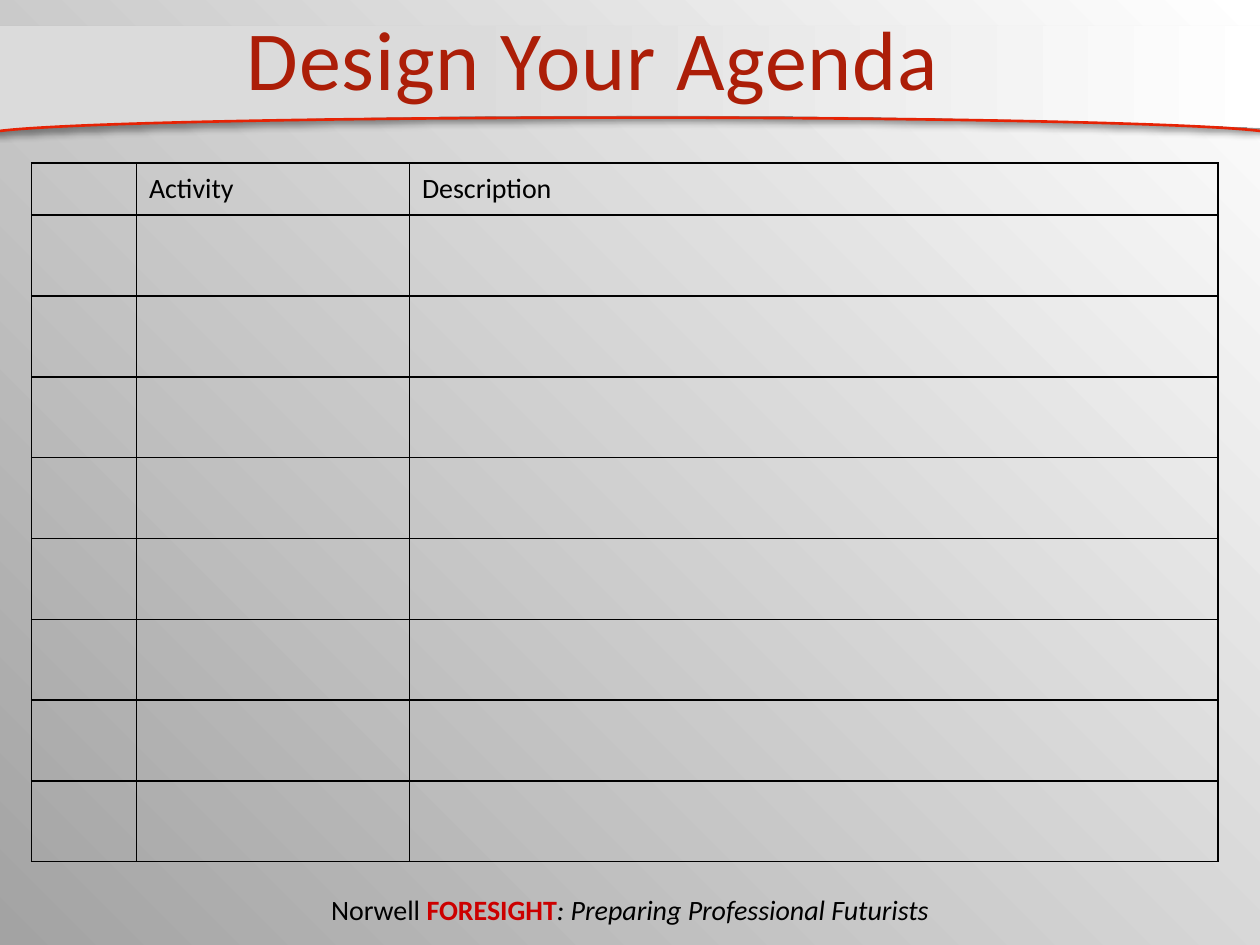
from dataclasses import dataclass

from pptx import Presentation
from pptx import util as u
from pptx.dml.color import RGBColor
from pptx.enum import shapes, text
from pptx.oxml import parse_xml
from pptx.oxml.ns import nsdecls


@dataclass(frozen=True)
class Theme:
    font: str = "Calibri"
    ink: str = "000000"
    title: str = "AC1E08"
    accent: str = "CC0000"
    arc: str = "E62305"
    backdrop: tuple = ((0, "FFFFFF"), (1, "A3A3A3"))
    band: tuple = ((0.36, "DBDBDB"), (1, "FFFFFF"))
    title_size: int = 48
    body_size: int = 16


def bezier(p0, p1, p2, p3, steps=30):
    """Points along a cubic curve, without its start."""
    for i in range(1, steps + 1):
        t = i / steps
        s = 1 - t
        yield tuple(s**3 * a + 3 * s * s * t * b + 3 * s * t * t * c + t**3 * d
                    for a, b, c, d in zip(p0, p1, p2, p3))


class AgendaSlide:
    """Places elements on a grid of 120 columns by 90 rows."""
    COLS, ROWS = 120, 90

    def __init__(self, prs, theme):
        self.theme = theme
        self.slide = prs.slides.add_slide(prs.slide_layouts[6])
        self.col = prs.slide_width / self.COLS
        self.row = prs.slide_height / self.ROWS

    def box(self, x, y, w, h):
        return (round(x * self.col), round(y * self.row),
                round(w * self.col), round(h * self.row))

    def gradient(self, fill, stops, angle):
        fill.gradient()
        fill.gradient_angle = angle
        for stop, (position, color) in zip(fill.gradient_stops, stops):
            stop.position = position
            stop.color.rgb = RGBColor.from_string(color)

    def backdrop(self):
        self.gradient(self.slide.background.fill, self.theme.backdrop, 225)

    def band(self, points):
        points = [self.box(x, y, 0, 0)[:2] for x, y in points]
        builder = self.slide.shapes.build_freeform(*points[0])
        builder.add_line_segments(points[1:])
        band = builder.convert_to_shape()
        self.gradient(band.fill, self.theme.band, 0)
        band.line.fill.background()
        band._element.spPr.append(parse_xml(
            f'<a:effectLst {nsdecls("a")}><a:outerShdw blurRad="{u.Pt(4)}" '
            f'dist="{u.Pt(3)}" dir="5400000" algn="t" rotWithShape="0">'
            f'<a:srgbClr val="{self.theme.ink}"><a:alpha val="40000"/></a:srgbClr>'
            '</a:outerShdw></a:effectLst>'))

    def arc(self, x, y, w, h, start, end):
        arc = self.slide.shapes.add_shape(
            shapes.MSO_SHAPE.ARC, *self.box(x, y, w, h))
        arc.adjustments[0], arc.adjustments[1] = start, end
        arc.shadow.inherit = False
        arc.fill.background()
        arc.line.color.rgb = RGBColor.from_string(self.theme.arc)
        arc.line.width = u.Pt(1.5)

    def style(self, run, size, color, bold=False, italic=False):
        font = run.font
        font.name, font.size = self.theme.font, u.Pt(size)
        font.bold, font.italic = bold, italic
        font.color.rgb = RGBColor.from_string(color)

    def text(self, x, y, w, h, parts, size, spacing=0):
        """parts: (wording, color, bold, italic) for each run."""
        frame = self.slide.shapes.add_textbox(*self.box(x, y, w, h)).text_frame
        frame.word_wrap = True
        frame.auto_size = text.MSO_AUTO_SIZE.SHAPE_TO_FIT_TEXT
        frame.vertical_anchor = text.MSO_ANCHOR.MIDDLE
        line = frame.paragraphs[0]
        line.alignment = text.PP_ALIGN.CENTER
        for wording, *look in parts:
            run = line.add_run()
            run.text = wording
            self.style(run, size, *look)
            if spacing:
                run.font._element.set("spc", str(round(spacing * 100)))

    def border(self, cell):
        props = cell._tc.get_or_add_tcPr()
        for i, side in enumerate(("lnL", "lnR", "lnT", "lnB")):
            props.insert(i, parse_xml(
                f'<a:{side} {nsdecls("a")} w="{u.Pt(1)}"><a:solidFill>'
                f'<a:srgbClr val="{self.theme.ink}"/></a:solidFill></a:{side}>'))

    def table(self, x, y, widths, heights, headings):
        table = self.slide.shapes.add_table(
            len(heights), len(widths),
            *self.box(x, y, sum(widths), sum(heights))).table
        table.first_row = table.horz_banding = False
        for column, width in zip(table.columns, widths):
            column.width = round(width * self.col)
        for row, height in zip(table.rows, heights):
            row.height = round(height * self.row)
        for cell in table.iter_cells():
            cell.fill.background()
            self.border(cell)
        for cell, heading in zip(table.rows[0].cells, headings):
            line = cell.text_frame.paragraphs[0]
            line.text = heading
            line.line_spacing = 1.07
            for run in line.runs:
                self.style(run, self.theme.body_size, self.theme.ink)


def main():
    prs = Presentation()
    prs.slide_width, prs.slide_height = u.Inches(10), u.Inches(7.5)
    theme = Theme()
    agenda = AgendaSlide(prs, theme)

    # Backdrop and curved header band
    agenda.backdrop()
    right, crest, left = (121, 12.2), (62.8, 11), (0, 12.4)
    agenda.band([(-1.1, 2.5), (121, 2.5), right,
                 *bezier(right, (105.7, 11.5), (85.2, 11), crest),
                 *bezier(crest, (37.9, 11), (15.6, 11.5), left),
                 (-1.1, 12.4)])
    agenda.arc(-1.3, 11.2, 122.6, 3.2, 108.02, 215.85)

    # Footer
    agenda.text(20, 84.4, 80, 4.4, [
        ("Norwell ", theme.ink),
        ("FORESIGHT", theme.accent, True),
        (": Preparing Professional Futurists", theme.ink, False, True),
    ], theme.body_size)

    # Title
    agenda.text(2, 0, 109, 10.9, [("Design Your Agenda", theme.title)],
                theme.title_size, spacing=0.5)

    # Agenda table: a heading row and eight rows to fill in
    agenda.table(3, 15.5, [10, 26, 77], [5] + [7.7] * 8,
                 ["", "Activity", "Description"])

    prs.save("out.pptx")


if __name__ == "__main__":
    main()
